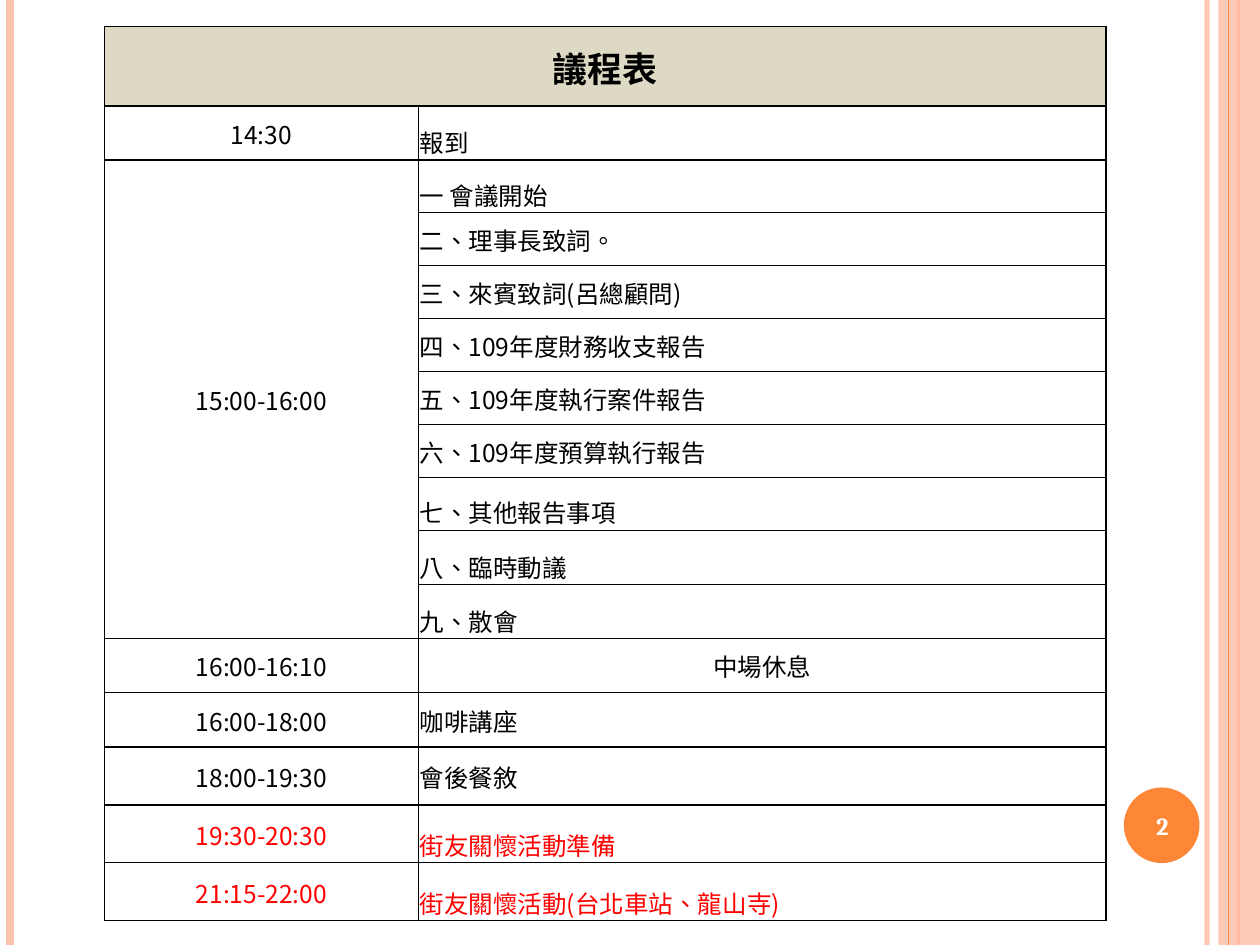
from dataclasses import dataclass

from pptx import Presentation
from pptx.dml.color import RGBColor
from pptx.enum.shapes import MSO_CONNECTOR, MSO_SHAPE
from pptx.enum.text import MSO_ANCHOR, PP_ALIGN
from pptx.oxml.ns import qn
from pptx.util import Inches, Pt
from lxml.etree import SubElement


@dataclass(frozen=True)
class Theme:
    orange: str = "FE8637"
    peach: str = "FEC3AE"
    header: str = "DDD9C4"
    black: str = "000000"
    white: str = "FFFFFF"
    red: str = "FF0000"
    cjk: str = "Noto Sans CJK SC"
    serif: str = "Cambria"
    title_size: int = 20
    body_size: int = 14
    thick: float = 1
    thin: float = 0.5


@dataclass(frozen=True)
class Stripe:
    x: float
    color: str
    width: float
    alpha: int = 100


@dataclass(frozen=True)
class Row:
    time: str
    item: str
    height: float
    align: PP_ALIGN = PP_ALIGN.LEFT
    anchor: MSO_ANCHOR = MSO_ANCHOR.BOTTOM
    color: str = "000000"
    bottom: float = 1
    divider: float = 1


T = Theme()
MID, JUST = MSO_ANCHOR.MIDDLE, PP_ALIGN.JUSTIFY
TITLE_HEIGHT = 0.63
SESSION_START, SESSION_END = 2, 10

STRIPES = [
    Stripe(9.58, T.peach, 3, 93),
    Stripe(0.08, T.peach, 4.5),
    Stripe(9.83, T.orange, 1.5),
]
INNER_STRIPE = Stripe(9.75, T.orange, 0.75)

ROWS = [
    Row("14:30", "報到", 0.43, divider=T.thin),
    Row("15:00-16:00", "一 會議開始", 0.42, bottom=T.thin),
    Row("", "二、理事長致詞。", 0.42, JUST, MID, bottom=T.thin),
    Row("", "三、來賓致詞(呂總顧問)", 0.42, JUST, MID, bottom=T.thin),
    Row("", "四、109年度財務收支報告", 0.42, JUST, MID, bottom=T.thin),
    Row("", "五、109年度執行案件報告", 0.42, JUST, MID, bottom=T.thin),
    Row("", "六、109年度預算執行報告", 0.42, JUST, MID, bottom=T.thin),
    Row("", "七、其他報告事項", 0.42, bottom=T.thin),
    Row("", "八、臨時動議", 0.43, bottom=T.thin),
    Row("", "九、散會", 0.43),
    Row("16:00-16:10", "中場休息", 0.43, PP_ALIGN.CENTER, MID),
    Row("16:00-18:00", "咖啡講座", 0.43, JUST, MID),
    Row("18:00-19:30", "會後餐敘", 0.46, JUST, MID),
    Row("19:30-20:30", "街友關懷活動準備", 0.46, color=T.red, bottom=T.thin),
    Row("21:15-22:00", "街友關懷活動(台北車站、龍山寺)", 0.46, color=T.red),
]


def set_alpha(parent, percent: int) -> None:
    color = next(parent.iter(qn("a:srgbClr")))
    SubElement(color, qn("a:alpha")).set("val", str(percent * 1000))


def add_stripe(slide, stripe: Stripe) -> None:
    x = Inches(stripe.x)
    line = slide.shapes.add_connector(MSO_CONNECTOR.STRAIGHT, x, 0, x, Inches(7.5))
    line.line.color.rgb = RGBColor.from_string(stripe.color)
    line.line.width = Pt(stripe.width)
    props = line._element.spPr
    if stripe.alpha < 100:
        set_alpha(props, stripe.alpha)
    SubElement(props, qn("a:effectLst"))


def add_filled(slide, kind: MSO_SHAPE, left: float, top: float,
               width: float, height: float, color: str):
    sp = slide.shapes.add_shape(kind, Inches(left), Inches(top),
                                Inches(width), Inches(height))
    sp.shadow.inherit = False
    sp.fill.solid()
    sp.fill.fore_color.rgb = RGBColor.from_string(color)
    sp.line.fill.background()
    return sp


def style_text(tf, align: PP_ALIGN, font: str, size: int, color: str, bold: bool) -> None:
    p = tf.paragraphs[0]
    p.alignment = align
    for r in p.runs:
        r.font.name, r.font.size, r.font.bold = font, Pt(size), bold
        r.font.color.rgb = RGBColor.from_string(color)
        props = r._r.get_or_add_rPr()
        props.set("lang", "zh-TW")
        SubElement(props, qn("a:ea")).set("typeface", font)


def set_borders(cell, left: float, right: float, top: float, bottom: float) -> None:
    props = cell._tc.get_or_add_tcPr()
    for side, width in zip("LRTB", (left, right, top, bottom)):
        ln = SubElement(props, qn(f"a:ln{side}"))
        ln.set("w", str(Pt(width)))
        fill = SubElement(ln, qn("a:solidFill"))
        SubElement(fill, qn("a:srgbClr")).set("val", T.black)


def fill_cell(cell, text: str, align: PP_ALIGN, anchor: MSO_ANCHOR, color: str,
              size: int = T.body_size, bold: bool = False) -> None:
    cell.text_frame.text = text
    cell.vertical_anchor = anchor
    cell.margin_left = cell.margin_right = cell.margin_top = Inches(0.01)
    cell.margin_bottom = 0
    style_text(cell.text_frame, align, T.cjk, size, color, bold)


def add_agenda(slide) -> None:
    heights = [TITLE_HEIGHT] + [row.height for row in ROWS]
    frame = slide.shapes.add_table(len(heights), 2, Inches(0.83), Inches(0.21),
                                   Inches(7.95), Inches(sum(heights)))
    table = frame.table
    table.first_row = table.horz_banding = False
    for column, width in zip(table.columns, (2.49, 5.46)):
        column.width = Inches(width)
    for table_row, height in zip(table.rows, heights):
        table_row.height = Inches(height)

    title = table.cell(0, 0)
    title.merge(table.cell(0, 1))
    table.cell(SESSION_START, 0).merge(table.cell(SESSION_END, 0))
    fill_cell(title, "議程表", PP_ALIGN.CENTER, MID, T.black, T.title_size, True)
    for cell in table.rows[0].cells:
        set_borders(cell, *[T.thick] * 4)
        cell.fill.solid()
        cell.fill.fore_color.rgb = RGBColor.from_string(T.header)

    top = T.thick
    for i, row in enumerate(ROWS, start=1):
        time, item = table.cell(i, 0), table.cell(i, 1)
        fill_cell(time, row.time, PP_ALIGN.CENTER, MID, row.color)
        fill_cell(item, row.item, row.align, row.anchor, row.color)
        in_session = SESSION_START <= i <= SESSION_END
        set_borders(time, T.thick, row.divider, T.thick if in_session else top,
                    T.thick if in_session else row.bottom)
        set_borders(item, row.divider, T.thick, top, row.bottom)
        time.fill.background()
        item.fill.background()
        top = row.bottom


def add_page_number(slide) -> None:
    add_filled(slide, MSO_SHAPE.OVAL, 8.92, 6.25, 0.6, 0.6, T.orange)
    box = slide.shapes.add_textbox(Inches(8.89), Inches(6.27), Inches(0.67), Inches(0.57))
    tf = box.text_frame
    tf.word_wrap = True
    tf.vertical_anchor = MID
    tf.text = "2"
    style_text(tf, PP_ALIGN.CENTER, T.serif, T.body_size, T.white, True)


def main() -> None:
    prs = Presentation()
    prs.slide_width, prs.slide_height = Inches(10), Inches(7.5)
    slide = prs.slides.add_slide(prs.slide_layouts[6])
    for stripe in STRIPES:
        add_stripe(slide, stripe)
    band = add_filled(slide, MSO_SHAPE.RECTANGLE, 9.67, 0, 0.33, 7.5, T.peach)
    set_alpha(band._element.spPr, 87)
    add_stripe(slide, INNER_STRIPE)
    add_page_number(slide)
    add_agenda(slide)
    prs.save("out.pptx")


if __name__ == "__main__":
    main()
